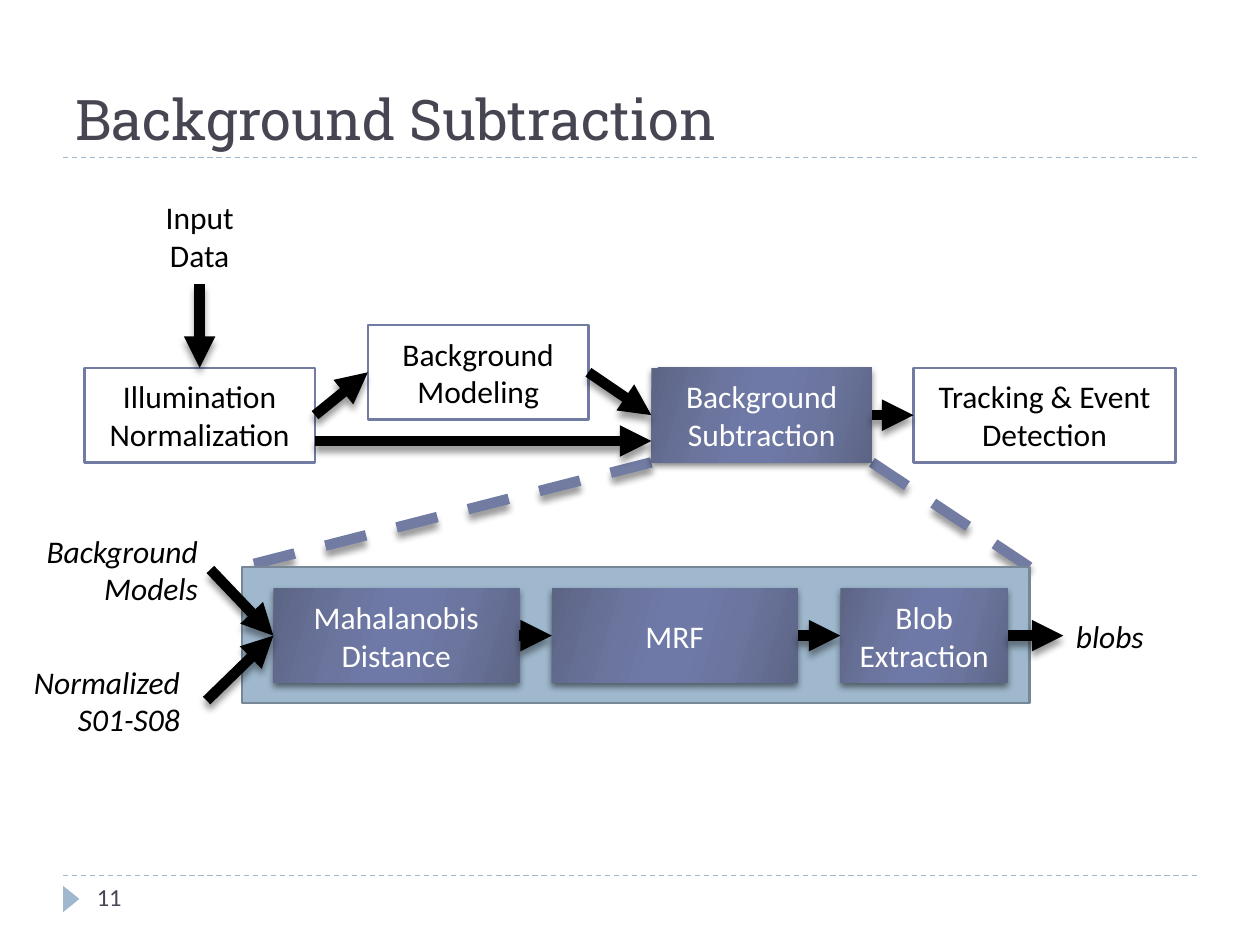
from lxml import etree
from pptx import Presentation
from pptx.dml.color import RGBColor
from pptx.enum.dml import MSO_LINE_DASH_STYLE as DASH
from pptx.enum.shapes import MSO_CONNECTOR, MSO_SHAPE
from pptx.enum.text import MSO_ANCHOR as ANCHOR, PP_ALIGN as ALIGN
from pptx.oxml import parse_xml
from pptx.oxml.ns import nsdecls, qn
from pptx.util import Inches, Pt

COLORS = {"ink": "000000", "paper": "FFFFFF", "heading": "464653",
          "accent": "727CA3", "pale": "9FB8CD", "panel_edge": "768898",
          "dark": "5D6585", "medium": "6B759E", "light": "6E79A7"}
SHEEN = [(0, "dark"), (30, "medium"), (45, "light"),
         (55, "light"), (73, "medium"), (100, "dark")]
TOP, LEFT, BOTTOM, RIGHT = range(4)


def rgb(name):
    return RGBColor.from_string(COLORS[name])


def write(shape, text, size=18, font="Calibri", color="ink", italic=False,
          aligns=(ALIGN.CENTER,), anchor=ANCHOR.MIDDLE, wrap=True):
    """Fill a shape with text; the last alignment serves all later lines."""
    frame = shape.text_frame
    frame.word_wrap = wrap
    frame.vertical_anchor = anchor
    frame.text = text
    for i, paragraph in enumerate(frame.paragraphs):
        paragraph.alignment = aligns[min(i, len(aligns) - 1)]
        style = paragraph.font
        style.size, style.name, style.italic = Pt(size), font, italic
        style.color.rgb = rgb(color)


def label(slide, left, top, width, height, text, **style):
    box = slide.shapes.add_textbox(*map(Inches, (left, top, width, height)))
    write(box, text, **style)
    return box


def cast_shadow(effects, opacity, distance):
    effects.append(parse_xml(
        f'<a:outerShdw {nsdecls("a")} blurRad="{Pt(4)}" dist="{Pt(distance)}" '
        f'dir="5400000" rotWithShape="0"><a:srgbClr val="{COLORS["ink"]}">'
        f'<a:alpha val="{opacity * 1000}"/></a:srgbClr></a:outerShdw>'))


def plain_shape(slide, kind, left, top, width, height, fill, edge=None):
    shape = slide.shapes.add_shape(kind, *map(Inches, (left, top, width, height)))
    shape.shadow.inherit = False
    shape.fill.solid()
    shape.fill.fore_color.rgb = rgb(fill)
    if edge:
        shape.line.color.rgb = rgb(edge)
        shape.line.width = Pt(1.5)
    else:
        shape.line.fill.background()
    return shape


def outlined_step(slide, left, top, width, height, text, **style):
    step = plain_shape(slide, MSO_SHAPE.RECTANGLE, left, top, width, height,
                       "paper", "accent")
    write(step, text, **style)
    return step


def shaded_step(slide, left, top, width, height, text):
    step = plain_shape(slide, MSO_SHAPE.RECTANGLE, left, top, width, height, "accent")
    step.fill.gradient()
    step.fill.gradient_angle = 344
    properties = step._element.spPr
    stops = properties.find(".//" + qn("a:gsLst"))
    for stop in list(stops):
        stops.remove(stop)
    for position, name in SHEEN:
        stop = etree.SubElement(stops, qn("a:gs"), pos=str(position * 1000))
        etree.SubElement(stop, qn("a:srgbClr"), val=COLORS[name])
    cast_shadow(properties.find(qn("a:effectLst")), 50, 2)
    write(step, text, color="paper")
    return step


def rule(slide, start, end, color, width, dashed=False, shadow=False):
    line = slide.shapes.add_connector(MSO_CONNECTOR.STRAIGHT,
                                      *map(Inches, (*start, *end)))
    line.line.color.rgb = rgb(color)
    line.line.width = Pt(width)
    if dashed:
        line.line.dash_style = DASH.DASH
    effects = etree.SubElement(line._element.spPr, qn("a:effectLst"))
    if shadow:
        cast_shadow(effects, 40, 3.4)
    return line


def arrow(slide, start, end):
    """Each end is a point (x, y) or a pair (shape, side)."""
    joined = [hasattr(place[0], "shape_id") for place in (start, end)]
    line = rule(slide, (0, 0) if joined[0] else start,
                (0, 0) if joined[1] else end, "ink", 6, shadow=True)
    if joined[0]:
        line.begin_connect(*start)
    if joined[1]:
        line.end_connect(*end)
    etree.SubElement(line.line._get_or_add_ln(), qn("a:tailEnd"), type="triangle")


def heading(slide, left, top, width, height):
    rule(slide, (left, top + height), (left + width, top + height), "pale", 0.75, True)
    label(slide, left, top, width, height, "Background Subtraction", size=32,
          font="Roboto Slab", color="heading", aligns=(ALIGN.LEFT,),
          anchor=ANCHOR.BOTTOM)


def footer(slide, left, top, width):
    rule(slide, (left, top), (left + width, top), "pale", 0.75, True)
    marker = plain_shape(slide, MSO_SHAPE.ISOSCELES_TRIANGLE, left - 0.04,
                         top + 0.12, 0.21, 0.13, "pale")
    marker.rotation = 90
    label(slide, left + 0.17, top, 2.17, 0.4, "11", size=14, color="heading",
          aligns=(ALIGN.LEFT,), anchor=ANCHOR.TOP)


def zoom_lines(slide, step_left, step_right, step_bottom,
               panel_left, panel_right, panel_top):
    for x, panel_x in ((step_left, panel_left), (step_right, panel_right)):
        rule(slide, (x, step_bottom), (panel_x, panel_top), "accent", 6, True, True)


def pipeline(slide, left, top):
    row, height = top + 1.42, 0.75
    source = label(slide, left + 0.33, top, 1.17, height, "Input Data")
    normalize = outlined_step(slide, left, row, 1.83, height,
                              "Illumination\nNormalization", wrap=False)
    model = outlined_step(slide, left + 2.25, row - 0.34, 1.75, height,
                          "Background\nModeling", wrap=False)
    subtract = shaded_step(slide, left + 4.5, row, 1.75, height,
                           "Background Subtraction")
    track = outlined_step(slide, left + 6.58, row, 2.08, height,
                          "Tracking & Event Detection")
    arrow(slide, (source, BOTTOM), (normalize, TOP))
    for before, after in ((normalize, model), (model, subtract), (subtract, track)):
        arrow(slide, (before, RIGHT), (after, LEFT))
    # Direct path below the modeling step
    arrow(slide, (left + 1.83, row + 0.58), (left + 4.5, row + 0.58))


def detail_panel(slide, left, top, width, height):
    plain_shape(slide, MSO_SHAPE.RECTANGLE, left, top, width, height,
                "pale", "panel_edge")
    row, step_height = top + 0.17, 0.75
    distance, field, blob = [
        shaded_step(slide, left + x, row, step_width, step_height, text)
        for x, step_width, text in ((0.25, 1.95, "Mahalanobis Distance"),
                                    (2.46, 1.95, "MRF"),
                                    (4.75, 1.33, "Blob Extraction"))]
    # Inputs and output
    label(slide, left - 1.92, top - 0.33, 1.67, 0.71, "Background Models",
          italic=True, aligns=(ALIGN.RIGHT,), anchor=ANCHOR.TOP)
    label(slide, left - 1.75, top + 0.71, 1.48, 0.71, "Normalized\nS01-S08",
          italic=True, aligns=(ALIGN.LEFT, ALIGN.RIGHT), anchor=ANCHOR.TOP, wrap=False)
    blobs = label(slide, left + 6.52, row, 1.15, step_height, "blobs",
                  italic=True, aligns=(ALIGN.LEFT,))
    for start in ((left - 0.25, top + 0.02), (left - 0.28, top + 1.06)):
        arrow(slide, start, (distance, LEFT))
    for before, after in ((distance, field), (field, blob), (blob, blobs)):
        arrow(slide, (before, RIGHT), (after, LEFT))


def main():
    deck = Presentation()
    deck.slide_width, deck.slide_height = Inches(10), Inches(7.5)
    slide = deck.slides.add_slide(deck.slide_layouts[6])
    heading(slide, 0.5, 0.17, 9, 1.08)
    footer(slide, 0.5, 6.95, 9)
    zoom_lines(slide, 5.17, 6.92, 3.67, 1.92, 8.17, 4.5)
    pipeline(slide, 0.67, 1.5)
    detail_panel(slide, 1.92, 4.5, 6.25, 1.08)
    deck.save("out.pptx")


if __name__ == "__main__":
    main()
